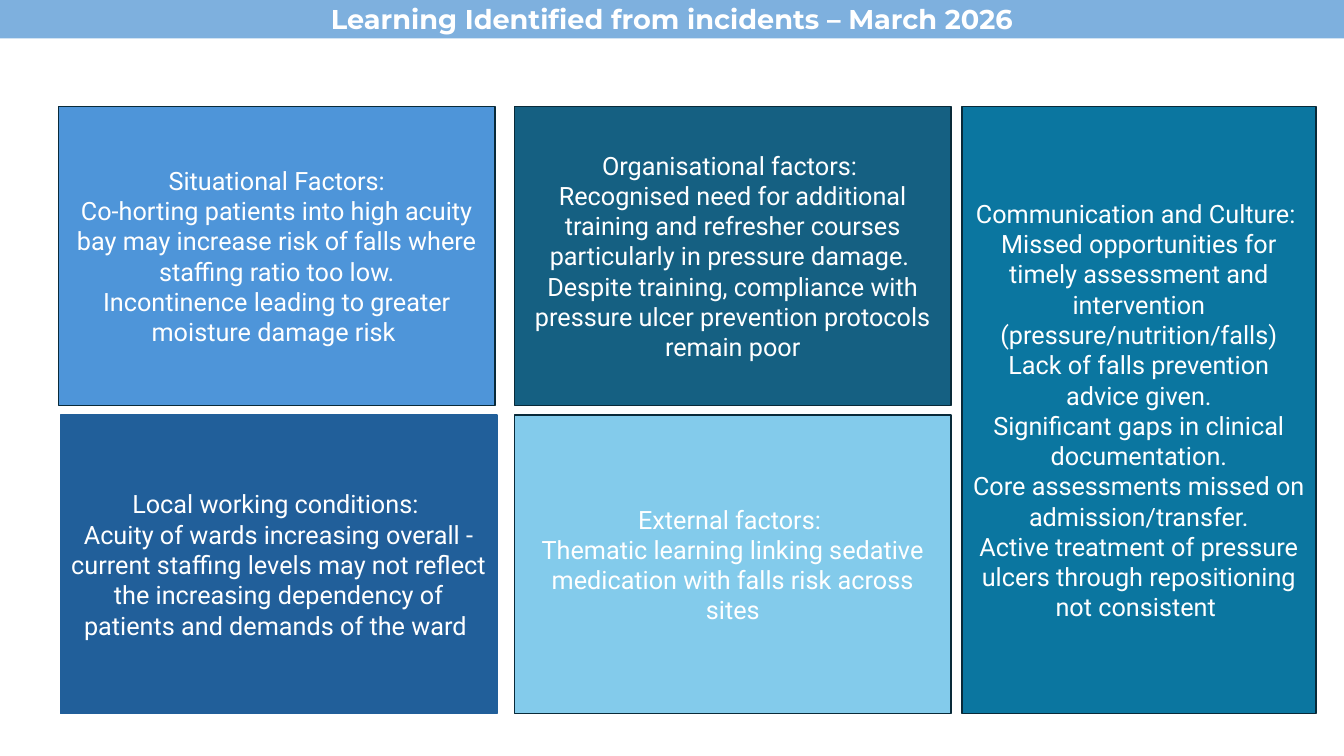
from pptx import Presentation
from pptx.dml.color import RGBColor
from pptx.enum.shapes import MSO_SHAPE as Shape
from pptx.enum.text import MSO_ANCHOR as Anchor, PP_ALIGN as Align
from pptx.util import Inches, Pt

WHITE = RGBColor(0xFF, 0xFF, 0xFF)
BANNER = RGBColor(0x7E, 0xB0, 0xDE)
OUTLINE = RGBColor(0x09, 0x2A, 0x39)
SKY = RGBColor(0x4E, 0x95, 0xD9)
PETROL = RGBColor(0x15, 0x60, 0x82)
NAVY = RGBColor(0x21, 0x5F, 0x9A)
PALE = RGBColor(0x83, 0xCB, 0xEB)
TEAL = RGBColor(0x0B, 0x76, 0xA0)

WIDTH, HEIGHT = 21.99, 12.37

# Panel grid
TOP, GAP = 1.74, 0.16
PANEL_WIDTH, PANEL_HEIGHT = 7.14, 4.89
LOWER = TOP + PANEL_HEIGHT + GAP
MIDDLE = 8.42
RIGHT = 15.74
TALL = 2 * PANEL_HEIGHT + GAP


class LearningSlide:
    title_font = {"name": "Montserrat", "size": Pt(32), "bold": True}
    panel_font = {"name": "Roboto", "size": Pt(29.7), "bold": False}
    panel_frame = {
        "vertical_anchor": Anchor.MIDDLE,
        "margin_left": Inches(0.16), "margin_right": Inches(0.16),
        "margin_top": Inches(0.08), "margin_bottom": Inches(0.08),
    }
    title_frame = {"vertical_anchor": Anchor.TOP}

    def __init__(self, deck):
        self.page = deck.slides.add_slide(deck.slide_layouts[6])

    def rectangle(self, left, top, width, height, fill):
        box = self.page.shapes.add_shape(
            Shape.RECTANGLE, Inches(left), Inches(top), Inches(width), Inches(height))
        box.shadow.inherit = False
        box.fill.solid()
        box.fill.fore_color.rgb = fill
        return box

    def add_lines(self, box, lines, frame_style, font_style):
        frame = box.text_frame
        frame.word_wrap = True
        for name, value in frame_style.items():
            setattr(frame, name, value)
        for index, line in enumerate(lines):
            para = frame.add_paragraph() if index else frame.paragraphs[0]
            para.alignment = Align.CENTER
            span = para.add_run()
            span.text = line
            span.font.color.rgb = WHITE
            for name, value in font_style.items():
                setattr(span.font, name, value)

    def title(self, text):
        box = self.rectangle(0, -0.01, WIDTH, 0.64, BANNER)
        box.line.fill.background()
        self.add_lines(box, [text], self.title_frame, self.title_font)

    def panel(self, left, top, fill, lines, width=PANEL_WIDTH,
              height=PANEL_HEIGHT, outline=OUTLINE):
        box = self.rectangle(left, top, width, height, fill)
        box.line.color.rgb = outline
        box.line.width = Pt(1.5)
        self.add_lines(box, lines, self.panel_frame, self.panel_font)


def main():
    deck = Presentation()
    deck.slide_width, deck.slide_height = Inches(WIDTH), Inches(HEIGHT)
    slide = LearningSlide(deck)

    # Upper left and tall right panels
    slide.panel(0.96, TOP, SKY, [
        "Situational Factors:",
        "Co-horting patients into high acuity bay may increase risk of falls "
        "where staffing ratio too low.",
        "Incontinence leading to greater moisture damage risk ",
    ])
    slide.panel(RIGHT, TOP, TEAL, [
        "Communication and Culture: ",
        "Missed opportunities for timely assessment and intervention "
        "(pressure/nutrition/falls)",
        "Lack of falls prevention advice given.",
        "Significant gaps in clinical documentation.",
        "Core assessments missed on admission/transfer.",
        "Active treatment of pressure ulcers through repositioning not consistent ",
    ], width=5.79, height=TALL)

    # Middle column
    slide.panel(MIDDLE, LOWER, PALE, [
        "External factors: ",
        "Thematic learning linking sedative medication with falls risk across sites",
    ])
    slide.panel(MIDDLE, TOP, PETROL, [
        "Organisational factors: ",
        "Recognised need for additional training and refresher courses "
        "particularly in pressure damage.  Despite training, compliance with "
        "pressure ulcer prevention protocols remain poor",
    ])

    # Lower left panel
    slide.panel(0.99, LOWER, NAVY, [
        "Local working conditions: ",
        "Acuity of wards increasing overall - current staffing levels may not "
        "reflect the increasing dependency of patients and demands of the ward ",
    ], outline=NAVY)

    # Title banner
    slide.title("Learning Identified from incidents – March 2026")

    deck.save("out.pptx")


if __name__ == "__main__":
    main()
